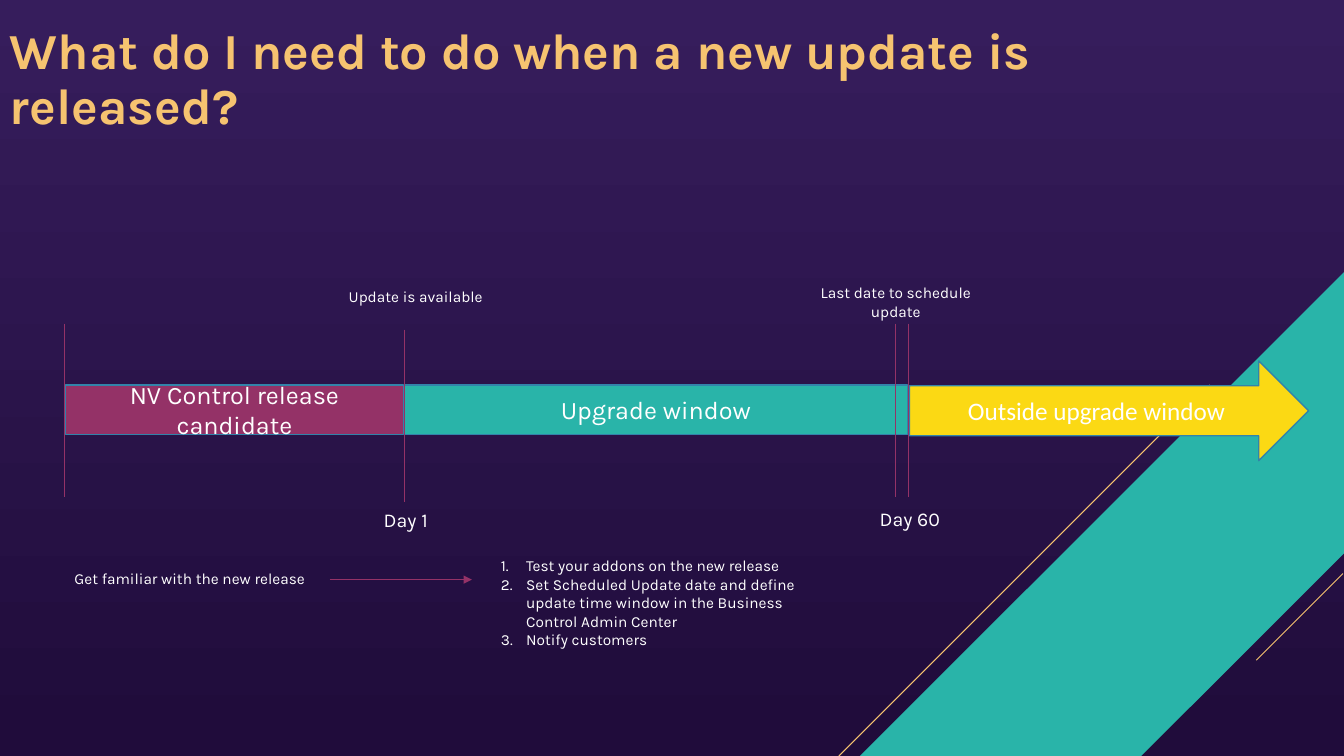
import pptx
import pptx.dml.color
import pptx.enum.shapes
import pptx.enum.text
import pptx.oxml
import pptx.oxml.ns
import pptx.util
from pptx.util import Inches

COLOURS = {
    "top": "361D5C", "bottom": "200C3B", "teal": "29B4A9", "gold": "F6C370",
    "plum": "943267", "yellow": "FBD914", "outline": "3284AA", "white": "FFFFFF",
}
SHAPES = pptx.enum.shapes.MSO_SHAPE
ALIGN = pptx.enum.text.PP_ALIGN

TITLE = "What do I need to do when a new update is released?"
RIBBON = [(13.33, 2.7), (8.53, 7.5), (11.32, 7.5), (13.33, 5.49)]
RIBBON_LINES = [((12, 3.82), (8.32, 7.5)), ((13.32, 5.69), (12.46, 6.55))]

# text, preset shape, box, fill, font
PHASES = [
    ("NV Control release candidate", SHAPES.RECTANGLE, (0.65, 3.82, 3.35, 0.49), "plum", "Karla"),
    ("Upgrade window", SHAPES.RECTANGLE, (4.01, 3.82, 4.99, 0.49), "teal", "Karla"),
    ("Outside upgrade window", SHAPES.RIGHT_ARROW, (9.02, 3.58, 3.96, 0.99), "yellow", "Calibri"),
]
# x, top, bottom
MARKERS = [(0.64, 3.21, 4.93), (4.01, 3.27, 4.98), (8.88, 3.21, 4.93), (9.01, 3.21, 4.93)]
TASK_ARROW = ((3.27, 5.75), (4.68, 5.75))

# text, box, size, alignment
LABELS = [
    ("Update is available", (3.36, 2.8, 1.95, 0.29), 11, ALIGN.LEFT),
    ("Last date to schedule update", (7.91, 2.76, 1.95, 0.47), 11, ALIGN.CENTER),
    ("Day 1", (3.36, 4.99, 1.33, 0.34), 14, ALIGN.CENTER),
    ("Day 60", (8.36, 4.98, 1.33, 0.34), 14, ALIGN.CENTER),
    ("Get familiar with the new release", (0.64, 5.6, 3.01, 0.29), 11, ALIGN.LEFT),
]
TASKS = [
    "Test your addons on the new release",
    "Set Scheduled Update date and define update time window in the Business Control Admin Center",
    "Notify customers",
]
TASKS_BOX = (4.87, 5.47, 3.3, 1.03)


def colour(name):
    return pptx.dml.color.RGBColor.from_string(COLOURS[name])


def add_element(parent, xml):
    """Append a drawing element such as '<a:effectLst/>' to parent."""
    tag, rest = xml[1:].split(" ", 1) if " " in xml else (xml[1:-2], "/>")
    parent.append(pptx.oxml.parse_xml(f"<{tag} {pptx.oxml.ns.nsdecls('a')} {rest}"))


def style_text(shape, size, font="Karla", ink="white", align=ALIGN.LEFT, bold=False):
    shape.text_frame.word_wrap = True
    for paragraph in shape.text_frame.paragraphs:
        paragraph.alignment = align
        for run in paragraph.runs:
            run.font.name = font
            run.font.size = pptx.util.Pt(size)
            run.font.bold = bold
            run.font.color.rgb = colour(ink)


def add_text(slide, text, box, size, **style):
    shape = slide.shapes.add_textbox(*map(Inches, box))
    shape.text_frame.text = text
    style_text(shape, size, **style)
    return shape


def add_line(slide, start, end, ink, width):
    line = slide.shapes.add_connector(
        pptx.enum.shapes.MSO_CONNECTOR.STRAIGHT, *map(Inches, start + end))
    line.line.color.rgb = colour(ink)
    line.line.width = pptx.util.Pt(width)
    add_element(line._element.spPr, "<a:effectLst/>")
    return line


def add_background(slide):
    fill = slide.background.fill
    fill.gradient()
    fill.gradient_angle = 270
    for stop, name, position in zip(fill.gradient_stops, ("top", "bottom"), (0, 0.98)):
        stop.color.rgb = colour(name)
        stop.position = position

    corners = [(Inches(x), Inches(y)) for x, y in RIBBON]
    builder = slide.shapes.build_freeform(*corners[0])
    builder.add_line_segments(corners[1:], close=True)
    ribbon = builder.convert_to_shape()
    ribbon.shadow.inherit = False
    ribbon.fill.solid()
    ribbon.fill.fore_color.rgb = colour("teal")
    ribbon.line.fill.background()
    for start, end in RIBBON_LINES:
        add_line(slide, start, end, "gold", 0.75)


def add_phase(slide, text, preset, box, fill, font):
    shape = slide.shapes.add_shape(preset, *map(Inches, box))
    shape.shadow.inherit = False
    shape.fill.solid()
    shape.fill.fore_color.rgb = colour(fill)
    shape.line.color.rgb = colour("outline")
    shape.line.width = pptx.util.Pt(1)
    shape.text_frame.text = text
    shape.text_frame.vertical_anchor = pptx.enum.text.MSO_ANCHOR.MIDDLE
    style_text(shape, 18, font=font, align=ALIGN.CENTER)


def add_tasks(slide):
    tasks = add_text(slide, "\n".join(TASKS), TASKS_BOX, 11)
    for paragraph in tasks.text_frame.paragraphs:
        properties = paragraph._p.get_or_add_pPr()
        properties.set("marL", str(Inches(0.25)))
        properties.set("indent", str(Inches(-0.25)))
        add_element(properties, '<a:buFont typeface="+mj-lt"/>')
        add_element(properties, '<a:buAutoNum type="arabicPeriod"/>')


def main():
    presentation = pptx.Presentation()
    presentation.slide_width = Inches(13.33)
    presentation.slide_height = Inches(7.5)
    slide = presentation.slides.add_slide(presentation.slide_layouts[6])

    add_background(slide)
    title = add_text(slide, TITLE, (0, 0.21, 10.92, 0.64), 36, ink="gold", bold=True)
    title.text_frame.paragraphs[0].line_spacing = 0.9

    for phase in PHASES:
        add_phase(slide, *phase)
    for x, top, bottom in MARKERS:
        add_line(slide, (x, top), (x, bottom), "plum", 0.5)
    for text, box, size, align in LABELS:
        add_text(slide, text, box, size, align=align)

    arrow = add_line(slide, *TASK_ARROW, "plum", 0.5)
    add_element(arrow.line._get_or_add_ln(), '<a:tailEnd type="triangle"/>')
    add_tasks(slide)
    presentation.save("out.pptx")


if __name__ == "__main__":
    main()
